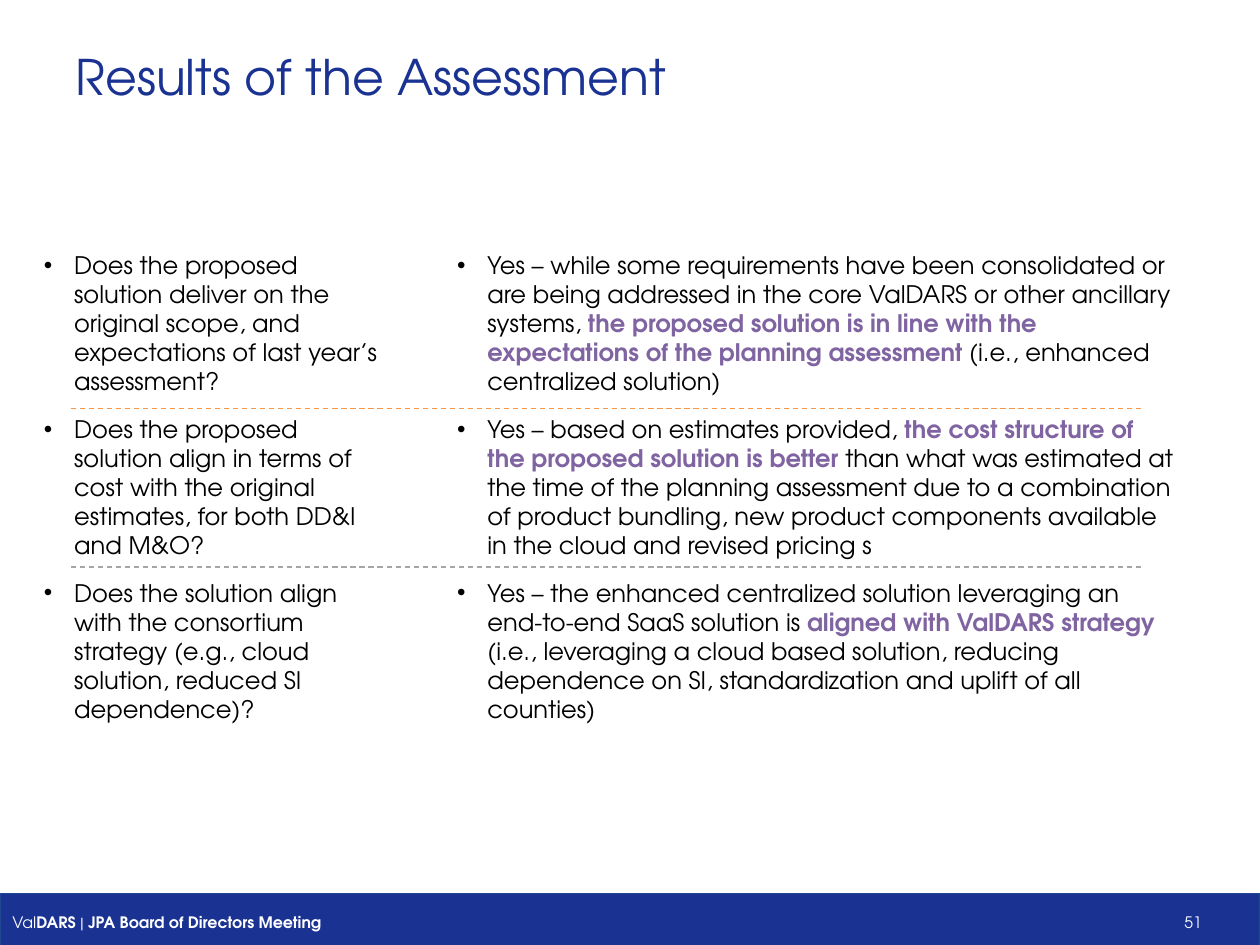
from dataclasses import dataclass

from lxml import etree
from pptx import Presentation
from pptx.dml.color import RGBColor
from pptx.enum.dml import MSO_LINE
from pptx.enum.shapes import MSO_CONNECTOR, MSO_SHAPE
from pptx.enum.text import MSO_ANCHOR, MSO_AUTO_SIZE, PP_ALIGN
from pptx.oxml.ns import qn
from pptx.util import Inches, Pt

RECT = MSO_SHAPE.RECTANGLE
STRAIGHT = MSO_CONNECTOR.STRAIGHT
DASH = MSO_LINE.DASH
TOP, MIDDLE = MSO_ANCHOR.TOP, MSO_ANCHOR.MIDDLE
LEFT = PP_ALIGN.LEFT
NO_FIT, GROW = MSO_AUTO_SIZE.NONE, MSO_AUTO_SIZE.SHAPE_TO_FIT_TEXT

FONT = "TeX Gyre Adventor"
NAVY, BLACK, WHITE, PURPLE = "1A3292", "000000", "FFFFFF", "8064A2"
ROW_TOP, ROW_STEP, ROW_TALL = 1.94, 1.3, 1.26
ASK_LEFT, ASK_WIDE = 0.25, 2.95
REPLY_LEFT, REPLY_WIDE = 3.53, 5.9


@dataclass
class Run:
    text: str
    bold: bool = False
    color: str = BLACK


@dataclass
class Row:
    ask: str
    lead: str
    point: str
    rest: str


@dataclass
class Rule:
    top: float
    color: str


ROWS = [
    Row("Does the proposed solution deliver on the original scope, and "
        "expectations of last year’s assessment?",
        "Yes – while some requirements have been consolidated or are being "
        "addressed in the core ValDARS or other ancillary systems, ",
        "the proposed solution is in line with the expectations of the "
        "planning assessment",
        " (i.e., enhanced centralized solution)"),
    Row("Does the proposed solution align in terms of cost with the original "
        "estimates, for both DD&I and M&O?",
        "Yes – based on estimates provided, ",
        "the cost structure of the proposed solution is better ",
        "than what was estimated at the time of the planning assessment due "
        "to a combination of product bundling, new product components "
        "available in the cloud and revised pricing s"),
    Row("Does the solution align with the consortium strategy (e.g., cloud "
        "solution, reduced SI dependence)?",
        "Yes – the enhanced centralized solution leveraging an end-to-end "
        "SaaS solution is ",
        "aligned with ValDARS strategy",
        " (i.e., leveraging a cloud based solution, reducing dependence on "
        "SI, standardization and uplift of all counties)"),
]
RULES = [Rule(3.24, "F79646"), Rule(4.5, "A6A6A6")]
FOOTER = [
    Run("Val", False, WHITE),
    Run("DARS", True, WHITE),
    Run(" | ", False, WHITE),
    Run("JPA Board of Directors Meeting\t\t", True, WHITE),
    Run("51", False, WHITE),
]


def rgb(code: str) -> RGBColor:
    return RGBColor.from_string(code)


def add_runs(para, runs: list[Run], size: float) -> None:
    for item in runs:
        run = para.add_run()
        run.text = item.text
        run.font.name = FONT
        run.font.size = Pt(size)
        run.font.bold = item.bold
        run.font.color.rgb = rgb(item.color)


def add_bullet(para) -> None:
    props = para._p.get_or_add_pPr()
    props.set("marL", str(Inches(0.24)))
    props.set("indent", str(-Inches(0.24)))
    etree.SubElement(props, qn("a:buFont")).set("typeface", "Arial")
    etree.SubElement(props, qn("a:buChar")).set("char", "•")


def add_tabs(para, stops: list[tuple[float, str]]) -> None:
    tabs = etree.SubElement(para._p.get_or_add_pPr(), qn("a:tabLst"))
    for place, side in stops:
        tab = etree.SubElement(tabs, qn("a:tab"))
        tab.set("pos", str(Inches(place)))
        tab.set("algn", side)


def add_cell(slide, left: float, top: float, wide: float,
             runs: list[Run]) -> None:
    box = slide.shapes.add_textbox(Inches(left), Inches(top),
                                   Inches(wide), Inches(ROW_TALL))
    frame = box.text_frame
    frame.word_wrap = True
    frame.auto_size = GROW
    para = frame.paragraphs[0]
    add_bullet(para)
    add_runs(para, runs, 13.8)


def add_rule(slide, rule: Rule) -> None:
    line = slide.shapes.add_connector(STRAIGHT, Inches(0.56), Inches(rule.top),
                                      Inches(9.06), Inches(rule.top))
    line.line.color.rgb = rgb(rule.color)
    line.line.width = Pt(0.75)
    line.line.dash_style = DASH
    etree.SubElement(line._element.spPr, qn("a:effectLst"))


def add_footer(slide) -> None:
    bar = slide.shapes.add_shape(RECT, 0, Inches(7.09), Inches(10), Inches(0.45))
    bar.shadow.inherit = False
    bar.fill.solid()
    bar.fill.fore_color.rgb = rgb(NAVY)
    bar.line.color.rgb = rgb("204792")
    bar.line.width = Pt(0.75)
    bar.text_frame.vertical_anchor = MIDDLE
    para = bar.text_frame.paragraphs[0]
    para.alignment = LEFT
    add_tabs(para, [(4.69, "l"), (9.44, "r")])
    add_runs(para, FOOTER, 9)


def set_title(slide, text: str) -> None:
    title = slide.shapes.title
    title.left, title.top = Inches(0.6), Inches(0.37)
    title.width, title.height = Inches(8.81), Inches(0.34)
    frame = title.text_frame
    frame.margin_left = frame.margin_right = 0
    frame.margin_top = frame.margin_bottom = 0
    frame.vertical_anchor = TOP
    frame.auto_size = NO_FIT
    para = frame.paragraphs[0]
    para.alignment = LEFT
    add_runs(para, [Run(text, color=NAVY)], 28)


def main() -> None:
    deck = Presentation()
    deck.slide_width, deck.slide_height = Inches(10), Inches(7.5)
    slide = deck.slides.add_slide(deck.slide_layouts[5])

    # Footer bar and title
    add_footer(slide)
    set_title(slide, "Results of the Assessment")

    # Questions on the left, answers on the right
    for i, row in enumerate(ROWS):
        top = ROW_TOP + i * ROW_STEP
        add_cell(slide, ASK_LEFT, top, ASK_WIDE, [Run(row.ask)])
        add_cell(slide, REPLY_LEFT, top, REPLY_WIDE,
                 [Run(row.lead), Run(row.point, True, PURPLE), Run(row.rest)])

    # Dashed rules between the rows
    for rule in RULES:
        add_rule(slide, rule)

    deck.save("out.pptx")


if __name__ == "__main__":
    main()
